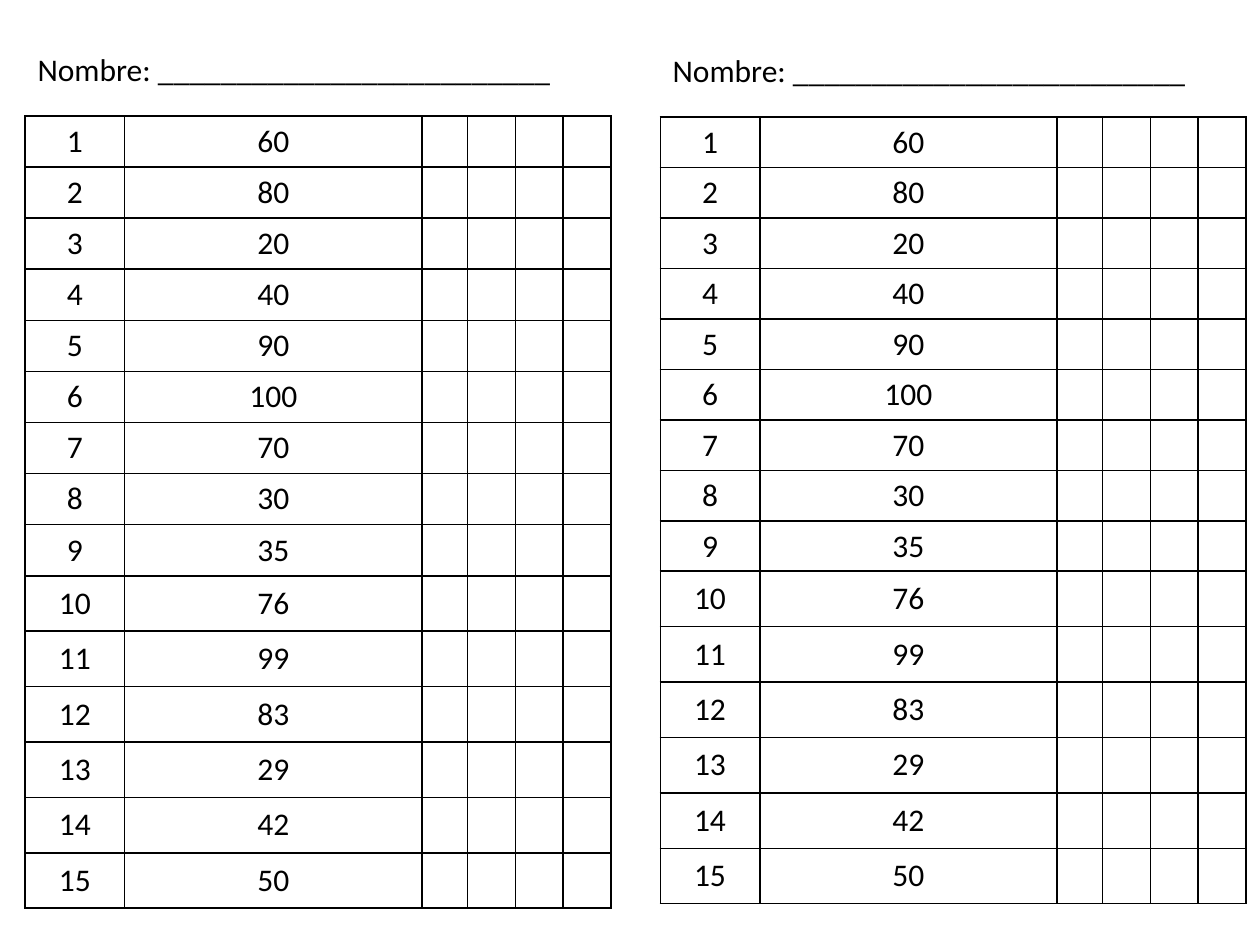
from lxml import etree
from pptx import Presentation
from pptx.dml.color import RGBColor
from pptx.enum.text import MSO_ANCHOR, MSO_AUTO_SIZE, PP_ALIGN
from pptx.oxml.ns import qn
from pptx.util import Inches, Pt

BLACK = RGBColor(0x00, 0x00, 0x00)
FONT = "Calibri"
CENTER = PP_ALIGN.CENTER
MIDDLE = MSO_ANCHOR.MIDDLE
FIT_SHAPE = MSO_AUTO_SIZE.SHAPE_TO_FIT_TEXT

NUMBERS = [60, 80, 20, 40, 90, 100, 70, 30, 35, 76, 99, 83, 29, 42, 50]
COLUMN_WIDTHS = [0.79, 2.36, 0.36, 0.38, 0.38, 0.38]
ROW_HEIGHTS = [0.35] * 9 + [0.44] * 6
TABLE_HEIGHT = 6.25
NAME_LINE = "Nombre: " + "_" * 25


def add_span(para, text):
    span = para.add_run()
    span.text = text
    span.font.name = FONT
    span.font.size = Pt(18)
    span.font.color.rgb = BLACK


def set_borders(cell):
    """Put a thin black line on all four sides, ahead of the cell's fill."""
    properties = cell._tc.get_or_add_tcPr()
    for position, side in enumerate(("a:lnL", "a:lnR", "a:lnT", "a:lnB")):
        line = etree.Element(qn(side), w=str(Pt(1)))
        fill = etree.SubElement(line, qn("a:solidFill"))
        etree.SubElement(fill, qn("a:srgbClr"), val=str(BLACK))
        properties.insert(position, line)


def add_number_table(page, left, top):
    frame = page.shapes.add_table(
        len(NUMBERS), len(COLUMN_WIDTHS), Inches(left), Inches(top),
        Inches(sum(COLUMN_WIDTHS)), Inches(TABLE_HEIGHT))
    table = frame.table
    table.first_row = False
    table.horz_banding = False
    for column, width in zip(table.columns, COLUMN_WIDTHS):
        column.width = Inches(width)
    for row, height in zip(table.rows, ROW_HEIGHTS):
        row.height = Inches(height)
    frame.height = Inches(TABLE_HEIGHT)

    for cell in table.iter_cells():
        cell.fill.background()
        set_borders(cell)
    for index, number in enumerate(NUMBERS):
        for column, value in enumerate((index + 1, number)):
            cell = table.cell(index, column)
            cell.vertical_anchor = MIDDLE
            para = cell.text_frame.paragraphs[0]
            para.alignment = CENTER
            add_span(para, str(value))


def add_name_line(page, left, top):
    box = page.shapes.add_textbox(
        Inches(left), Inches(top), Inches(4.41), Inches(0.4))
    box.text_frame.word_wrap = True
    box.text_frame.auto_size = FIT_SHAPE
    add_span(box.text_frame.paragraphs[0], NAME_LINE)


def add_worksheet(page, left, top):
    add_number_table(page, left, top + 0.57)
    add_name_line(page, left, top)


def main():
    deck = Presentation()
    deck.slide_width = Inches(10)
    deck.slide_height = Inches(7.5)
    page = deck.slides.add_slide(deck.slide_layouts[6])
    add_worksheet(page, 0.2, 0.35)
    add_worksheet(page, 5.24, 0.36)
    deck.save("out.pptx")


if __name__ == "__main__":
    main()
